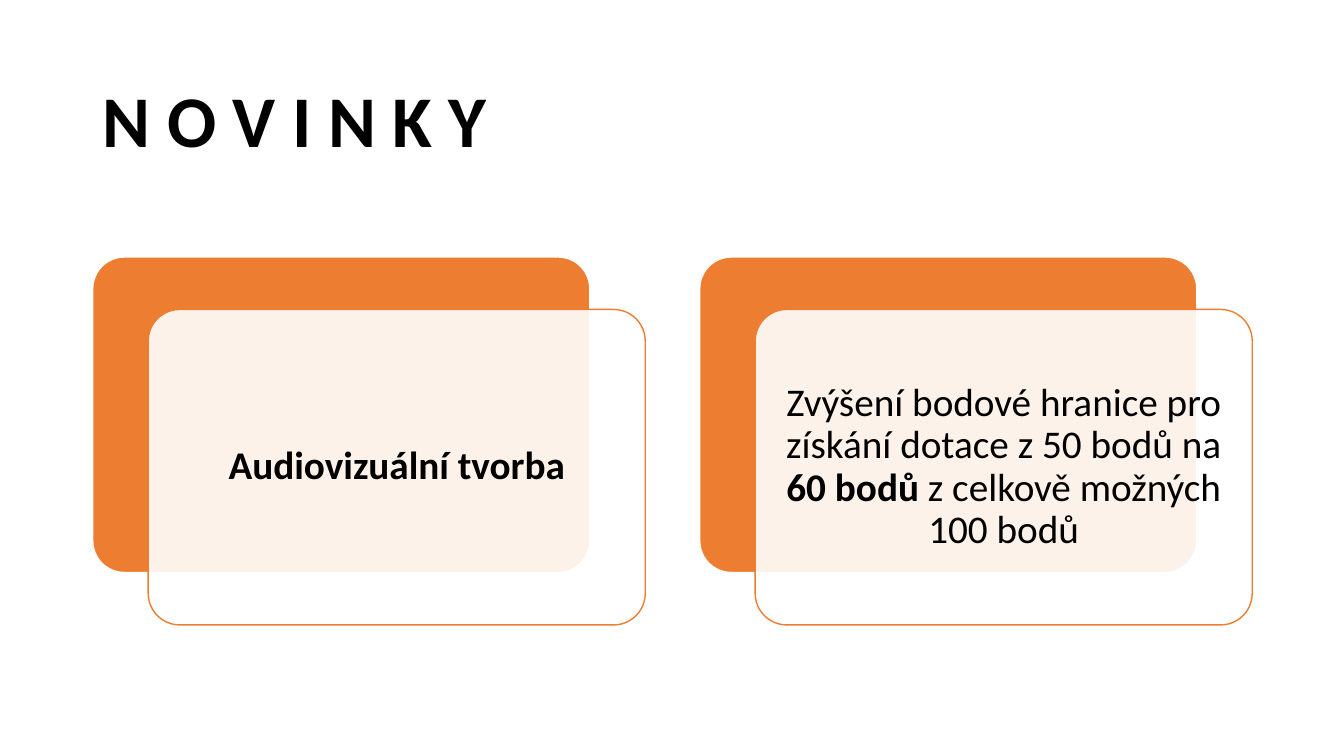
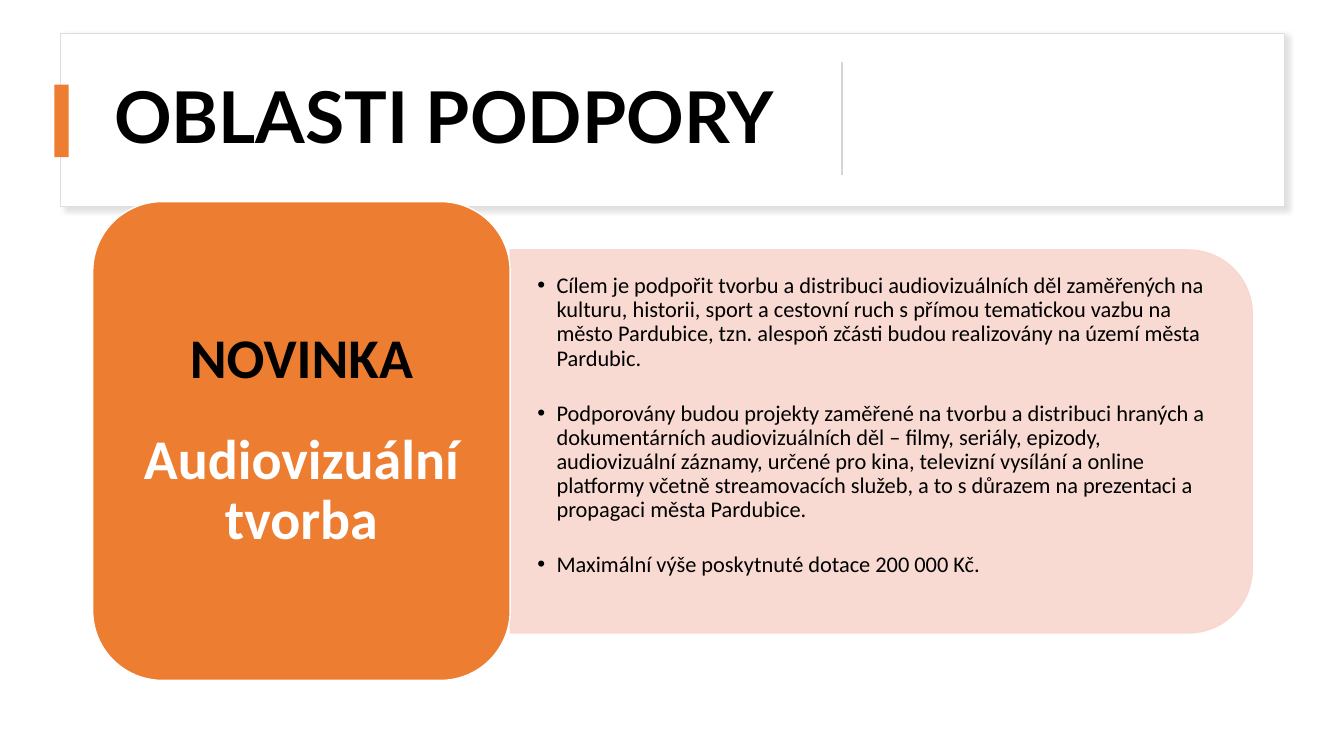
import pptx
import pptx.dml.color
import pptx.enum.shapes
import pptx.enum.text
import pptx.oxml
import pptx.oxml.ns
import pptx.util
import lxml.etree

Inches = pptx.util.Inches
Shape = pptx.enum.shapes.MSO_SHAPE
Align = pptx.enum.text.PP_ALIGN
qn = pptx.oxml.ns.qn

ORANGE = "ED7D31"
PINK = "F8D7CE"
WHITE = "FFFFFF"
BLACK = "000000"
TITLE_ONLY, TITLE_AND_BODY = 5, 1


def paint(fill, value, opacity=100):
    fill.solid()
    fill.fore_color.rgb = pptx.dml.color.RGBColor.from_string(value)
    if opacity < 100:
        color = fill._xPr.find(qn("a:solidFill"))[0]
        lxml.etree.SubElement(color, qn("a:alpha"), val=str(opacity * 1000))


def style(box, size, align, font="Calibri", margins=(0.1, 0.05), gap=0):
    frame = box.text_frame
    frame.word_wrap = True
    frame.auto_size = pptx.enum.text.MSO_AUTO_SIZE.NONE
    frame.vertical_anchor = pptx.enum.text.MSO_ANCHOR.MIDDLE
    frame.margin_left = frame.margin_right = Inches(margins[0])
    frame.margin_top = frame.margin_bottom = Inches(margins[1])
    for index, para in enumerate(frame.paragraphs):
        para.alignment = align
        para.line_spacing = 0.9
        para.space_before = pptx.util.Pt(gap if index else 0)
        para.space_after = pptx.util.Pt(0)
        for span in para.runs:
            span.font.size = pptx.util.Pt(size)
            span.font.name = font
            paint(span.font.fill, BLACK)


deck = pptx.Presentation()
deck.slide_width = Inches(13.33)
deck.slide_height = Inches(7.5)

news = deck.slides.add_slide(deck.slide_layouts[TITLE_ONLY])
title = news.shapes.title
title.left, title.top, title.width, title.height = map(Inches, (0.92, 0.61, 11.5, 1.24))
title.text_frame.text = "N O V I N K Y"
style(title, 52, Align.LEFT)
title.text_frame.paragraphs[0].runs[0].font.bold = True

card_texts = [
    [("Audiovizuální tvorba", True)],
    [
        ("Zvýšení bodové hranice pro získání dotace z 50 bodů na ", False),
        ("60 bodů ", True),
        ("z celkově možných 100 bodů", False),
    ],
]
for column, pieces in enumerate(card_texts):
    left = 0.92 + column * 6.02
    layers = [(0, 0, ORANGE, WHITE, 100), (0.55, 0.52, WHITE, ORANGE, 90)]
    for shift_x, shift_y, fill, outline, opacity in layers:
        card = news.shapes.add_shape(
            Shape.ROUNDED_RECTANGLE,
            Inches(left + shift_x), Inches(2.55 + shift_y), Inches(4.93), Inches(3.13),
        )
        card.adjustments[0] = 0.1
        card.shadow.inherit = False
        paint(card.fill, fill, opacity)
        paint(card.line.fill, outline)
        card.line.width = pptx.util.Pt(1)
    for text, bold in pieces:
        span = card.text_frame.paragraphs[0].add_run()
        span.text = text
        span.font.bold = bold
    style(card, 28, Align.CENTER, margins=(0.12, 0.12))

support = deck.slides.add_slide(deck.slide_layouts[TITLE_AND_BODY])
title = support.shapes.title
body = support.placeholders[1]
tree = title.element.getparent()

banner = support.shapes.add_shape(
    Shape.RECTANGLE, Inches(0.6), Inches(0.33), Inches(12.14), Inches(1.72)
)
paint(banner.fill, WHITE)
paint(banner.line.fill, "DEDEDE")
banner.line.width = pptx.util.Pt(1)
banner.shadow.inherit = False
effects = banner.element.spPr.find(qn("a:effectLst"))
shadow = lxml.etree.SubElement(
    effects, qn("a:outerShdw"),
    blurRad=str(pptx.util.Pt(4)), dist=str(pptx.util.Pt(3)), dir="2700000",
    algn="tl", rotWithShape="0",
)
shade = lxml.etree.SubElement(shadow, qn("a:srgbClr"), val="C5C3C3")
lxml.etree.SubElement(shade, qn("a:alpha"), val="50000")

tree.append(title.element)
title.left, title.top, title.width, title.height = map(Inches, (0.89, 0.44, 7.03, 1.5))
title.text_frame.text = "OBLASTI PODPORY"
style(title, 51, Align.CENTER, font="Lato")
title.text_frame.paragraphs[0].runs[0].font.bold = True

accent = support.shapes.add_shape(
    Shape.RECTANGLE, Inches(0.54), Inches(0.84), Inches(0.14), Inches(0.72)
)
accent.shadow.inherit = False
paint(accent.fill, ORANGE)
accent.line.fill.background()

divider = support.shapes.add_connector(
    pptx.enum.shapes.MSO_CONNECTOR.STRAIGHT,
    Inches(8.35), Inches(0.62), Inches(8.35), Inches(1.74),
)
paint(divider.line.fill, "D5D5D5")
divider.line.width = pptx.util.Pt(1.5)
lxml.etree.SubElement(divider.element.spPr, qn("a:effectLst"))

panel = support.shapes.add_shape(
    Shape.ROUND_2_SAME_RECTANGLE, Inches(6.84), Inches(0.7), Inches(3.8), Inches(7.36)
)
panel.rotation = 90
panel.shadow.inherit = False
paint(panel.fill, PINK, 90)
paint(panel.line.fill, PINK, 90)
panel.line.width = pptx.util.Pt(1)

tree.append(body.element)
body.left, body.top, body.width, body.height = map(Inches, (5.06, 2.51, 7.17, 3.43))
body.text_frame.text = "\n".join([
    "Cílem je podpořit tvorbu a distribuci audiovizuálních děl zaměřených na kulturu, "
    "historii, sport a cestovní ruch s přímou tematickou vazbu na město Pardubice, "
    "tzn. alespoň zčásti budou realizovány na území města Pardubic.",
    "Podporovány budou projekty zaměřené na tvorbu a distribuci hraných a dokumentárních "
    "audiovizuálních děl – filmy, seriály, epizody, audiovizuální záznamy, určené pro kina, "
    "televizní vysílání a online platformy včetně streamovacích služeb, a to s důrazem "
    "na prezentaci a propagaci města Pardubice.",
    "Maximální výše poskytnuté dotace 200 000 Kč.",
])
for para in body.text_frame.paragraphs:
    properties = para._p.get_or_add_pPr()
    properties.set("marL", str(Inches(0.19)))
    properties.set("indent", str(-Inches(0.19)))
    lxml.etree.SubElement(properties, qn("a:buChar"), char="•")
style(body, 16, Align.LEFT, margins=(0.27, 0.14), gap=22)

topic = support.shapes.add_shape(
    Shape.ROUNDED_RECTANGLE, Inches(0.92), Inches(2), Inches(4.14), Inches(4.75)
)
topic.shadow.inherit = False
paint(topic.fill, ORANGE)
paint(topic.line.fill, WHITE)
topic.line.width = pptx.util.Pt(1)
topic.text_frame.text = "NOVINKA\nAudiovizuální tvorba"
style(topic, 40, Align.CENTER, margins=(0.17, 0.08), gap=29)
for para, color in zip(topic.text_frame.paragraphs, (BLACK, WHITE)):
    para.runs[0].font.bold = True
    paint(para.runs[0].font.fill, color)

deck.save("out.pptx")
